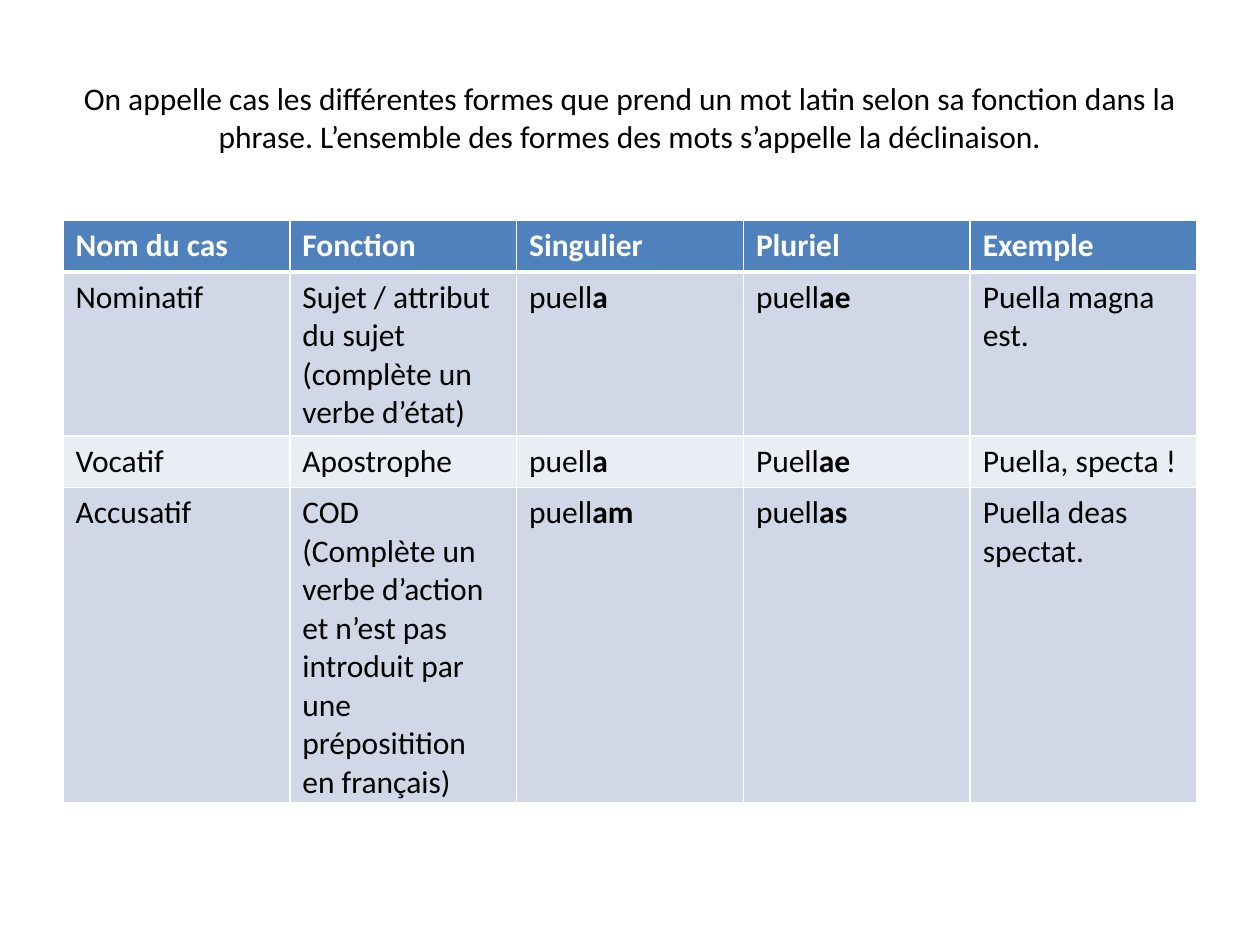
from dataclasses import dataclass

from lxml import etree
from pptx import Presentation
from pptx.dml.color import RGBColor
from pptx.enum import text
from pptx.oxml import ns
from pptx.util import Inches, Pt

WHITE = RGBColor(0xFF, 0xFF, 0xFF)
BLACK = RGBColor(0x00, 0x00, 0x00)
BLUE = RGBColor(0x4F, 0x81, 0xBD)
MID = RGBColor(0xD0, 0xD8, 0xE8)
PALE = RGBColor(0xE9, 0xED, 0xF4)
FONT = "Calibri"
SIZE = Pt(18)

INTRO = ("On appelle cas les différentes formes que prend un mot latin selon "
         "sa fonction dans la phrase. L’ensemble des formes des mots "
         "s’appelle la déclinaison.")
HEADS = ["Nom du cas", "Fonction", "Singulier", "Pluriel", "Exemple"]


@dataclass
class Case:
    name: str
    role: list[str]          # one entry per paragraph
    single: tuple[str, str]  # stem, bold ending
    plural: tuple[str, str]
    sample: str


CASES = [
    Case("Nominatif", ["Sujet / attribut du sujet (complète un verbe d’état)"],
         ("puell", "a"), ("puell", "ae"), "Puella magna est."),
    Case("Vocatif", ["Apostrophe"],
         ("puell", "a"), ("Puell", "ae"), "Puella, specta !"),
    Case("Accusatif",
         ["COD", "(Complète un verbe d’action et n’est pas introduit par "
                 "une prépositition en français)"],
         ("puell", "am"), ("puell", "as"), "Puella deas spectat."),
]


def add_run(para, words: str, color: RGBColor, bold: bool = False) -> None:
    run = para.add_run()
    run.text = words
    font = run.font
    font.name, font.size, font.bold = FONT, SIZE, bold
    font.color.rgb = color


def add_lines(cell, top: int, bottom: int) -> None:
    """Draw the white cell borders; widths in points."""
    props = cell._tc.get_or_add_tcPr()
    sides = {"lnL": 1, "lnR": 1, "lnT": top, "lnB": bottom}
    for spot, (tag, width) in enumerate(sides.items()):
        line = etree.Element(ns.qn(f"a:{tag}"), w=str(Pt(width)))
        fill = etree.SubElement(line, ns.qn("a:solidFill"))
        etree.SubElement(fill, ns.qn("a:srgbClr"), val=str(WHITE))
        props.insert(spot, line)


def fill_cell(cell, paras: list, fill: RGBColor, color: RGBColor,
              top: int = 1, bottom: int = 1) -> None:
    """Each paragraph is a list of (words, bold) runs."""
    cell.fill.solid()
    cell.fill.fore_color.rgb = fill
    add_lines(cell, top, bottom)
    frame = cell.text_frame
    for num, runs in enumerate(paras):
        para = frame.add_paragraph() if num else frame.paragraphs[0]
        for words, bold in runs:
            add_run(para, words, color, bold)


def add_intro(slide) -> None:
    box = slide.shapes.add_textbox(Inches(0.5), Inches(0.3),
                                   Inches(9), Inches(1.25))
    frame = box.text_frame
    frame.word_wrap = True
    frame.vertical_anchor = text.MSO_ANCHOR.MIDDLE
    para = frame.paragraphs[0]
    para.alignment = text.PP_ALIGN.CENTER
    add_run(para, INTRO, BLACK)


def add_cases(slide) -> None:
    count = len(CASES) + 1
    table = slide.shapes.add_table(count, len(HEADS), Inches(0.5), Inches(1.75),
                                   Inches(9), Inches(0.41 * count)).table

    # Header row
    for col, head in enumerate(HEADS):
        fill_cell(table.cell(0, col), [[(head, True)]], BLUE, WHITE, bottom=3)

    # One row per case, in alternating tints
    for row, case in enumerate(CASES, 1):
        cells = [
            [[(case.name, False)]],
            [[(line, False)] for line in case.role],
            *([[(stem, False), (end, True)]]
              for stem, end in (case.single, case.plural)),
            [[(case.sample, False)]],
        ]
        for col, paras in enumerate(cells):
            fill_cell(table.cell(row, col), paras, MID if row % 2 else PALE,
                      BLACK, top=3 if row == 1 else 1)


def main() -> None:
    deck = Presentation()
    deck.slide_width, deck.slide_height = Inches(10), Inches(7.5)
    slide = deck.slides.add_slide(deck.slide_layouts[6])
    add_intro(slide)
    add_cases(slide)
    deck.save("out.pptx")


if __name__ == "__main__":
    main()
